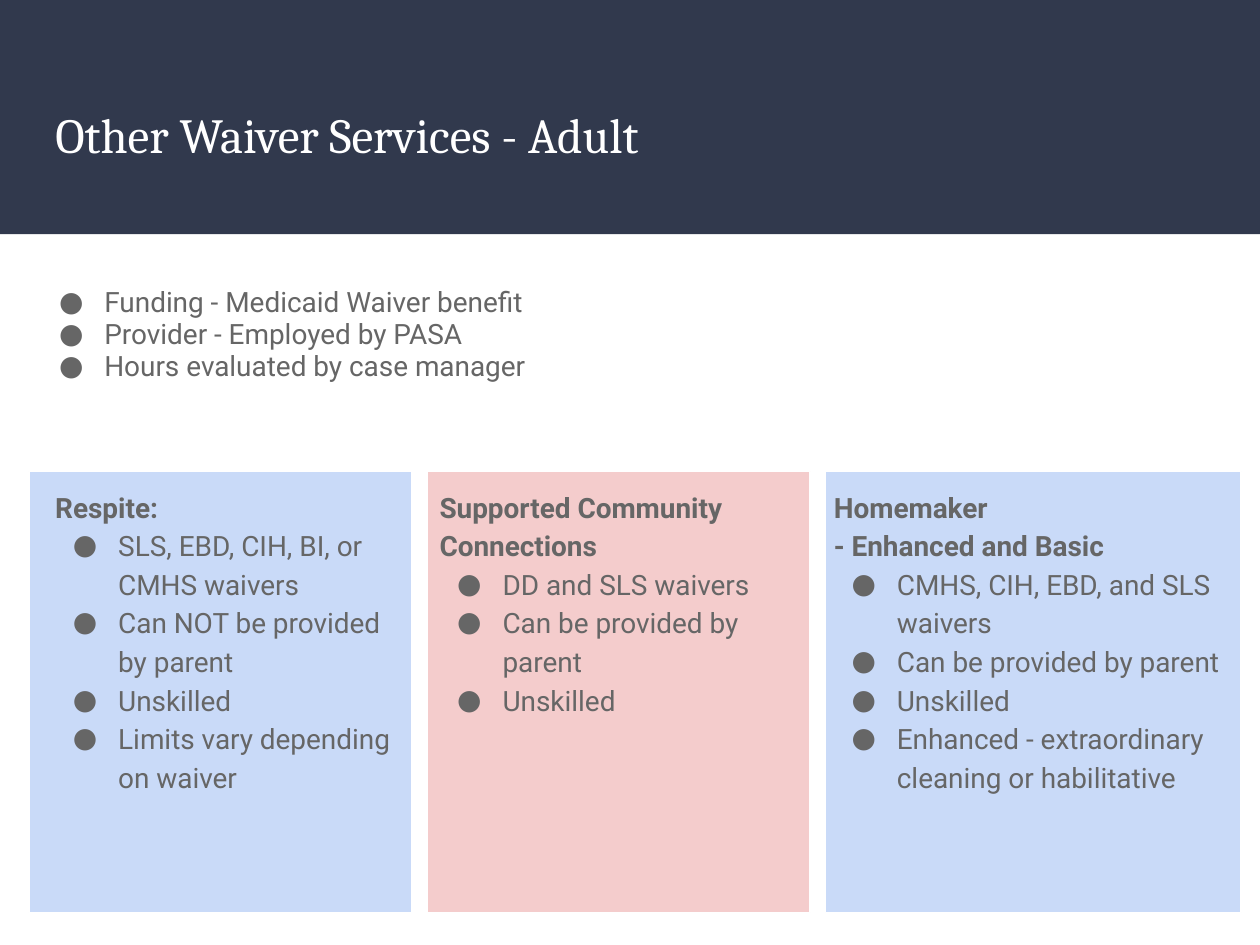
"""Build the adult waiver services slide."""
from lxml import etree
from pptx import Presentation
from pptx.dml.color import RGBColor
from pptx.enum.shapes import MSO_SHAPE
from pptx.enum.text import MSO_ANCHOR, MSO_AUTO_SIZE, PP_ALIGN
from pptx.oxml.ns import qn
from pptx.util import Inches, Pt

RECT = MSO_SHAPE.RECTANGLE
TOP, LEFT, NO_FIT = MSO_ANCHOR.TOP, PP_ALIGN.LEFT, MSO_AUTO_SIZE.NONE

THEME = {
    "navy": "31394D", "blue": "C9DAF8", "pink": "F4CCCC",
    "white": "FFFFFF", "grey": "666666",
    "title_font": "Cambria", "body_font": "Roboto",
    "title_size": 28, "body_size": 16,
}

TITLE = "Other Waiver Services - Adult"
INTRO = [
    "Funding - Medicaid Waiver benefit",
    "Provider - Employed by PASA",
    "Hours evaluated by case manager",
]
SERVICES = [
    {"fill": "blue", "card": (0.23, 3.04), "text": (0.34, 2.86),
     "heading": ["Respite:"],
     "points": ["SLS, EBD, CIH, BI, or CMHS waivers",
                "Can NOT be provided by parent",
                "Unskilled",
                "Limits vary depending on waiver"]},
    {"fill": "pink", "card": (3.39, 3.04), "text": (3.39, 3.04),
     "heading": ["Supported Community Connections"],
     "points": ["DD and SLS waivers",
                "Can be provided by parent",
                "Unskilled"]},
    {"fill": "blue", "card": (6.55, 3.3), "text": (6.52, 3.3),
     "heading": ["Homemaker", "- Enhanced and Basic"],
     "points": ["CMHS, CIH, EBD, and SLS waivers",
                "Can be provided by parent",
                "Unskilled",
                "Enhanced - extraordinary cleaning or habilitative"]},
]
CARD_TOP, CARD_HEIGHT = 3.74, 3.5
TEXT_TOP, TEXT_HEIGHT = 3.75, 3.36


def color(name):
    return RGBColor.from_string(THEME[name])


def add_rect(s, x, y, w, h, fill, line=None):
    sp = s.shapes.add_shape(RECT, Inches(x), Inches(y), Inches(w), Inches(h))
    sp.shadow.inherit = False
    sp.fill.solid()
    sp.fill.fore_color.rgb = color(fill)
    if line:
        sp.line.color.rgb = color(line)
        sp.line.width = Pt(0.75)
    else:
        sp.line.fill.background()
    return sp


def set_frame(tf):
    tf.word_wrap = True
    tf.auto_size = NO_FIT
    tf.vertical_anchor = TOP
    tf.margin_left = tf.margin_right = Inches(0.1)
    tf.margin_top = tf.margin_bottom = Inches(0.1)


def add_run(p, text, role, fill, bold=False):
    r = p.add_run()
    r.text = text
    r.font.name = THEME[role + "_font"]
    r.font.size = Pt(THEME[role + "_size"])
    r.font.color.rgb = color(fill)
    r.font.bold = bold


def add_bullet(p):
    pPr = p._p.get_or_add_pPr()
    pPr.set("marL", str(Inches(0.5)))
    pPr.set("indent", str(Inches(-0.36)))
    clr = etree.SubElement(pPr, qn("a:buClr"))
    etree.SubElement(clr, qn("a:srgbClr"), val=THEME["grey"])
    etree.SubElement(pPr, qn("a:buFont"), typeface=THEME["body_font"])
    etree.SubElement(pPr, qn("a:buChar"), char="●")


def add_text(s, x, y, w, h, heading, points, spacing):
    tf = s.shapes.add_textbox(Inches(x), Inches(y), Inches(w), Inches(h)).text_frame
    set_frame(tf)
    lines = [(t, True) for t in heading] + [(t, False) for t in points]
    for i, (text, is_heading) in enumerate(lines):
        p = tf.add_paragraph() if i else tf.paragraphs[0]
        p.line_spacing = spacing
        if not is_heading:
            add_bullet(p)
        add_run(p, text, "body", "grey", is_heading)


def add_title(s):
    title = s.shapes.title
    title.left, title.top = Inches(0.34), Inches(0.73)
    title.width, title.height = Inches(9.32), Inches(0.91)
    set_frame(title.text_frame)
    p = title.text_frame.paragraphs[0]
    p.alignment = LEFT
    add_run(p, TITLE, "title", "white")
    band = add_rect(s, 0, 0, 10, 1.86, "navy")
    title._element.addprevious(band._element)


def main():
    prs = Presentation()
    prs.slide_width, prs.slide_height = Inches(10), Inches(7.5)
    s = prs.slides.add_slide(prs.slide_layouts[5])
    add_title(s)
    add_text(s, 0.23, 2.18, 9.11, 1.57, [], INTRO, 0.95)
    for service in SERVICES:
        x, w = service["card"]
        add_rect(s, x, CARD_TOP, w, CARD_HEIGHT, service["fill"], "white")
        x, w = service["text"]
        add_text(s, x, TEXT_TOP, w, TEXT_HEIGHT,
                 service["heading"], service["points"], 1.15)
    prs.save("out.pptx")


if __name__ == "__main__":
    main()
